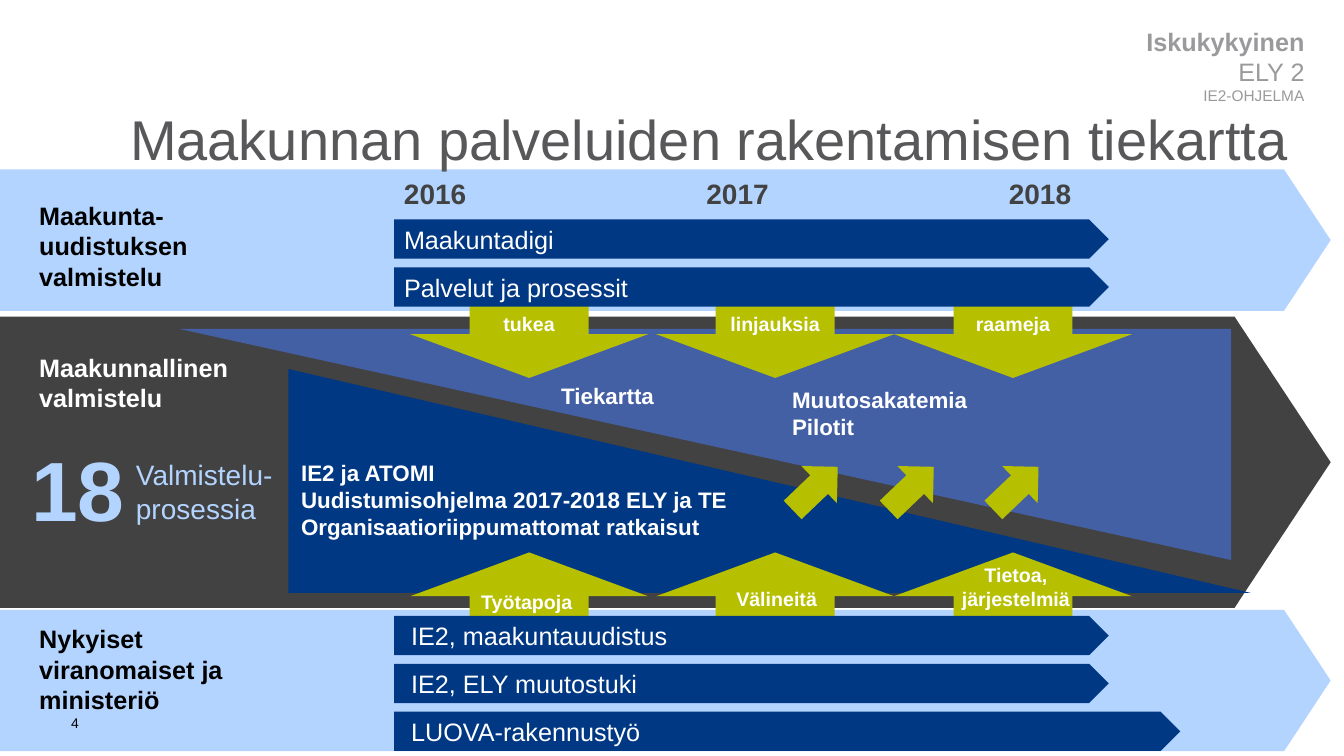
"""Build the roadmap slide for the regional services programme."""
import pptx
import pptx.dml.color
import pptx.enum.shapes
import pptx.enum.text
import pptx.util
from lxml import etree

Pt = pptx.util.Pt
RGBColor = pptx.dml.color.RGBColor
SHAPE = pptx.enum.shapes.MSO_SHAPE
ALIGN = pptx.enum.text.PP_ALIGN
ANCHOR = pptx.enum.text.MSO_ANCHOR

LIGHT_BLUE = RGBColor(0xB3, 0xD4, 0xFF)
CHARCOAL = RGBColor(0x42, 0x42, 0x43)
NAVY = RGBColor(0x00, 0x38, 0x83)
BLUE = RGBColor(0x44, 0x60, 0xA5)
LIME = RGBColor(0xB6, 0xBF, 0x00)
TITLE_GREY = RGBColor(0x58, 0x58, 0x5A)
HEADER_GREY = RGBColor(0x9A, 0x9A, 0x9D)
WHITE = RGBColor(0xFF, 0xFF, 0xFF)
BLACK = RGBColor(0x00, 0x00, 0x00)

BAR_LEFT, BAR_WIDTH, BAR_HEIGHT, BAR_STEP = 281.5, 510.5, 28, 34.2
ARROW_LEFTS = (293, 468.7, 638.6)
ARROW_WIDTH, ARROW_HEIGHT = 170, 62.6
YEAR_STEP = 216


def write(frame, lines, size=18, color=WHITE, bold=False, align=ALIGN.LEFT,
          anchor=ANCHOR.TOP, left_inset=7.2, tabs=()):
    frame.word_wrap = True
    frame.vertical_anchor = anchor
    frame.margin_left, frame.margin_right = Pt(left_inset), Pt(7.2)
    frame.margin_top = frame.margin_bottom = Pt(3.6)
    for index, line in enumerate(lines):
        wording, line_size, line_bold = line if isinstance(line, tuple) else (line, size, bold)
        paragraph = frame.paragraphs[0] if index == 0 else frame.add_paragraph()
        paragraph.text = wording
        paragraph.alignment = align
        paragraph.line_spacing = 1.0
        if tabs:
            properties = paragraph._p.get_or_add_pPr()
            tab_list = etree.SubElement(properties, pptx.oxml.ns.qn("a:tabLst"))
            for position in tabs:
                etree.SubElement(tab_list, pptx.oxml.ns.qn("a:tab"),
                                 pos=str(Pt(position)), algn="l")
        for run in paragraph.runs:
            run.font.name = "Arial"
            run.font.size = Pt(line_size)
            run.font.bold = line_bold
            run.font.color.rgb = color


class Roadmap:
    def __init__(self):
        self.deck = pptx.Presentation()
        self.deck.slide_width, self.deck.slide_height = Pt(960), Pt(540)
        self.slide = self.deck.slides.add_slide(self.deck.slide_layouts[5])

    def title(self, wording, left, top, width, height):
        heading = self.slide.shapes.title
        heading.left, heading.top = Pt(left), Pt(top)
        heading.width, heading.height = Pt(width), Pt(height)
        write(heading.text_frame, [wording], size=40, color=TITLE_GREY)
        heading.text_frame.auto_size = pptx.enum.text.MSO_AUTO_SIZE.NONE
        self.slide.shapes._spTree.append(heading._element)

    def shape(self, preset, left, top, width, height, fill, rotation=0, point=None):
        shape = self.slide.shapes.add_shape(preset, Pt(left), Pt(top), Pt(width), Pt(height))
        shape.shadow.inherit = False
        shape.fill.solid()
        shape.fill.fore_color.rgb = fill
        shape.line.fill.background()
        shape.rotation = rotation
        if point is not None:
            shape.adjustments[0] = point
        return shape

    def band(self, top, height, fill):
        self.shape(SHAPE.PENTAGON, -8, top, 958.5, height, fill, point=0.33)

    def bar(self, wording, top, width=BAR_WIDTH, left_inset=7.2):
        bar = self.shape(SHAPE.PENTAGON, BAR_LEFT, top, width, BAR_HEIGHT, NAVY)
        write(bar.text_frame, [wording], anchor=ANCHOR.MIDDLE, left_inset=left_inset)

    def text(self, lines, left, top, width, height, **style):
        box = self.slide.shapes.add_textbox(Pt(left), Pt(top), Pt(width), Pt(height))
        write(box.text_frame, lines, **style)


def main():
    roadmap = Roadmap()
    roadmap.band(435.6, 101, LIGHT_BLUE)
    roadmap.band(226.2, 208, CHARCOAL)
    roadmap.band(121, 101, LIGHT_BLUE)
    roadmap.title("Maakunnan palveluiden rakentamisen tiekartta", 85.7, 71.3, 852.5, 50.4)
    roadmap.text([("Iskukykyinen", 18, True), ("ELY 2", 18, False), ("IE2-OHJELMA", 11, False)],
                 790, 15.1, 149, 64, color=HEADER_GREY, align=ALIGN.RIGHT)

    roadmap.shape(SHAPE.RIGHT_TRIANGLE, 206, 263.6, 687.6, 160, NAVY)
    roadmap.shape(SHAPE.RIGHT_TRIANGLE, 128.3, 235, 751, 165, BLUE, rotation=180)
    roadmap.text(["Muutosakatemia", "Pilotit"], 558.7, 272.2, 318, 67, size=16, bold=True)
    roadmap.text(["Tiekartta"], 393.8, 269.5, 85.7, 48, size=16, bold=True)
    roadmap.text(["IE2 ja ATOMI", "Uudistumisohjelma 2017-2018 ELY ja TE",
                  "Organisaatioriippumattomat ratkaisut"],
                 208, 324.7, 333.4, 65.5, size=16, bold=True)
    for left in (560, 628.6, 703.4):
        roadmap.shape(SHAPE.RIGHT_ARROW, left, 330.5, 44.6, 36.7, LIME, rotation=316.3)

    for left, support in zip(ARROW_LEFTS, ("tukea", "linjauksia", "raameja")):
        roadmap.shape(SHAPE.UP_ARROW, left, 394.6, ARROW_WIDTH, ARROW_HEIGHT, LIME)
        down = roadmap.shape(SHAPE.DOWN_ARROW, left, 207.4, ARROW_WIDTH, ARROW_HEIGHT, LIME)
        write(down.text_frame, [support], size=14, bold=True,
              align=ALIGN.CENTER, anchor=ANCHOR.MIDDLE)
    for wording, left, top, width, height in (
            ("Työtapoja", 332, 417.6, 88.6, 24.5),
            ("Välineitä", 510.5, 416, 88.6, 24.5),
            ("Tietoa, järjestelmiä", 678.2, 398.9, 95, 41)):
        roadmap.text([wording], left, top, width, height, size=14, bold=True, align=ALIGN.CENTER)

    for row, wording in enumerate(("Maakuntadigi", "Palvelut ja prosessit")):
        roadmap.bar(wording, 156.8 + row * BAR_STEP)
    for row, (wording, width) in enumerate((
            ("IE2, maakuntauudistus", BAR_WIDTH),
            ("IE2, ELY muutostuki", BAR_WIDTH),
            ("LUOVA-rakennustyö", 561.6))):
        roadmap.bar(wording, 440 + row * BAR_STEP, width, left_inset=12.2)
    roadmap.text(["2016\t2017\t2018"], BAR_LEFT, 122.4, 566.6, 31.5, size=20,
                 color=CHARCOAL, bold=True, tabs=(YEAR_STEP, 2 * YEAR_STEP))

    for wording, top, height, color in (
            ("Maakunta-uudistuksen valmistelu", 139.7, 73, BLACK),
            ("Maakunnallinen valmistelu", 248.2, 51, WHITE),
            ("Nykyiset viranomaiset ja ministeriö", 442, 73, BLACK)):
        roadmap.text([wording], 20.9, top, 170, height, color=color, bold=True)
    roadmap.text(["18"], 15.1, 308.9, 90, 80, size=60, color=LIGHT_BLUE, bold=True)
    roadmap.text(["Valmistelu-prosessia"], 90, 323.3, 157, 55.4, size=20, color=LIGHT_BLUE)
    roadmap.text(["4"], 21.6, 502.6, 41.8, 28, size=10, color=BLACK,
                 align=ALIGN.RIGHT, anchor=ANCHOR.MIDDLE)
    roadmap.deck.save("out.pptx")


if __name__ == "__main__":
    main()
